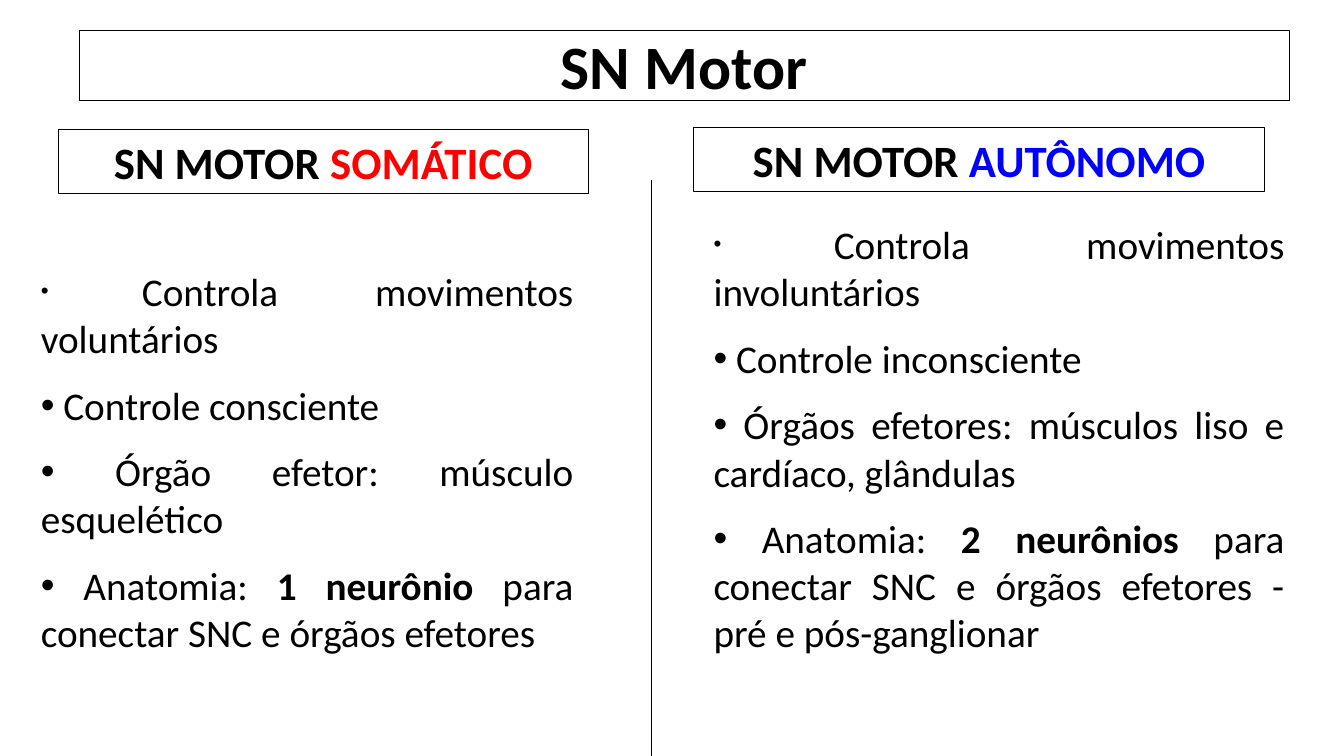
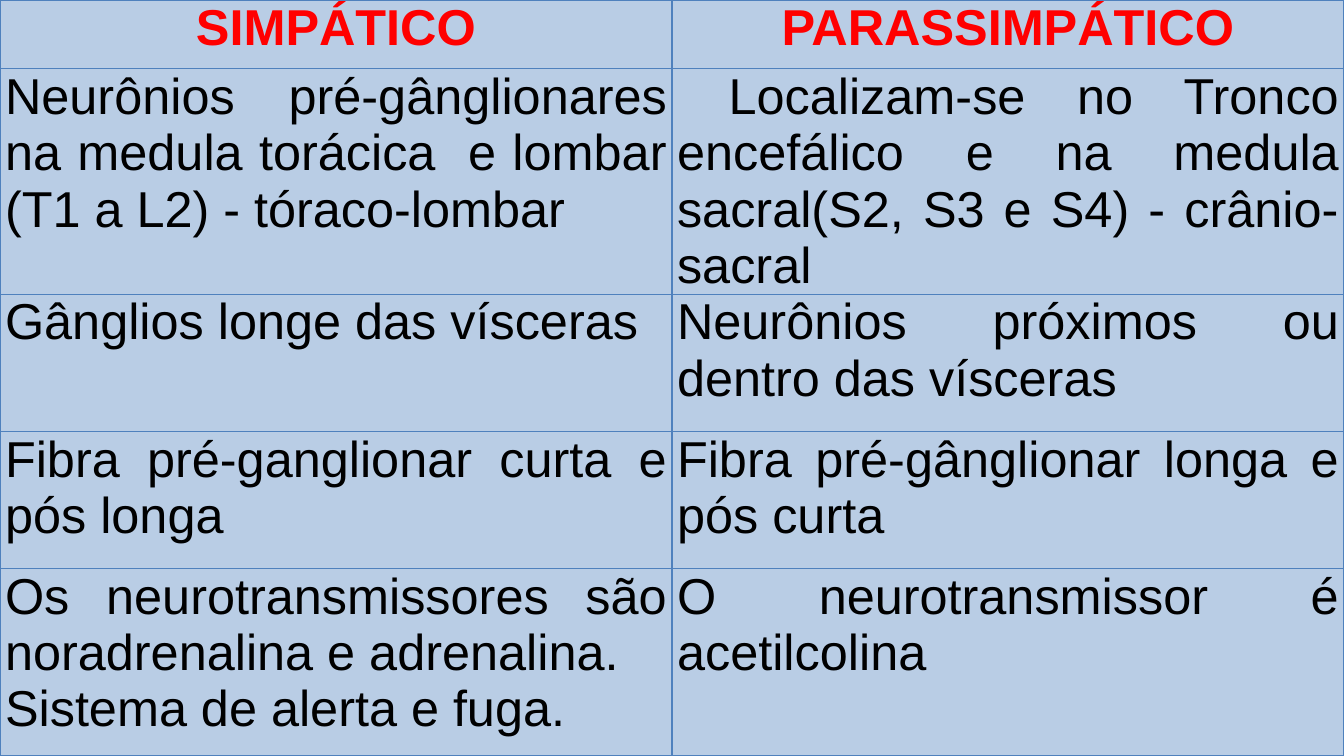
from lxml.etree import SubElement
from pptx import Presentation
from pptx.dml.color import RGBColor
from pptx.enum.shapes import MSO_CONNECTOR, MSO_SHAPE
from pptx.enum.text import MSO_ANCHOR, PP_ALIGN
from pptx.oxml.ns import qn
from pptx.util import Inches, Pt

COLORS = {"text": "000000", "red": "FF0000", "blue": "0000FF",
          "cell": "B9CDE5", "border": "4F81BD"}
WIDTH, HEIGHT = Inches(13.33), Inches(7.5)

deck = Presentation()
deck.slide_width, deck.slide_height = WIDTH, HEIGHT
blank = deck.slide_layouts[6]


def place(left, top, width, height):
    """Turn percentages of the slide's size into lengths."""
    return (int(WIDTH * left / 100), int(HEIGHT * top / 100),
            int(WIDTH * width / 100), int(HEIGHT * height / 100))


def write(para, spans, align, **base):
    """Fill a paragraph with (text, format) spans on top of a base format."""
    para.alignment = align
    for text, changes in spans:
        span = para.add_run()
        span.text = text
        look = {"size": Pt(28), "name": "Calibri", "bold": False,
                "color": "text", **base, **changes}
        span.font.color.rgb = RGBColor.from_string(COLORS[look.pop("color")])
        for key, value in look.items():
            setattr(span.font, key, value)


# Slide 1: somatic and autonomic motor systems side by side
page = deck.slides.add_slide(blank)

# Framed title and column headings
frames = [
    ((5.9, 4, 90, 9.2), 44, 0.25, [("SN Motor", {})]),
    ((4.35, 17.1, 39.4, 8.5), 32, 0.25,
     [("SN MOTOR ", {}), ("SOMÁTICO", {"color": "red"})]),
    ((51.6, 16.8, 42.5, 8.5), 32, 0.5,
     [("SN MOTOR ", {}), ("AUTÔNOMO", {"color": "blue"})]),
]
for area, size, line_width, spans in frames:
    box = page.shapes.add_shape(MSO_SHAPE.RECTANGLE, *place(*area))
    box.shadow.inherit = False
    box.fill.background()
    box.line.color.rgb = RGBColor.from_string(COLORS["text"])
    box.line.width = Pt(line_width)
    box.text_frame.word_wrap = True
    box.text_frame.vertical_anchor = MSO_ANCHOR.MIDDLE
    write(box.text_frame.paragraphs[0], spans, PP_ALIGN.CENTER,
          size=Pt(size), bold=True)

# Bulleted columns: the small first space also sets the first bullet's size
small, strong = {"size": Pt(16)}, {"bold": True}
columns = [
    ((2.3, 34.7, 41.1, 54.8), [
        [(" ", small), ("Controla movimentos voluntários", {})],
        [(" Controle consciente", {})],
        [(" Órgão efetor: músculo esquelético", {})],
        [(" Anatomia: ", {}), ("1 neurônio", strong),
         (" para conectar SNC e órgãos efetores", {})],
    ]),
    ((52.35, 28.5, 43.95, 61.1), [
        [(" ", small), ("Controla movimentos involuntários", {})],
        [(" Controle inconsciente", {})],
        [(" Órgãos efetores: músculos liso e cardíaco, glândulas", {})],
        [(" Anatomia: ", {}), ("2 neurônios", strong),
         (" para conectar SNC e órgãos efetores - pré e pós-ganglionar", {})],
    ]),
]
for area, items in columns:
    frame = page.shapes.add_textbox(*place(*area)).text_frame
    frame.word_wrap = True
    for index, spans in enumerate(items):
        para = frame.add_paragraph() if index else frame.paragraphs[0]
        para.space_before = Pt(14 if index else 0)
        write(para, spans, PP_ALIGN.JUSTIFY)
        properties = para._p.get_or_add_pPr()
        SubElement(properties, qn("a:buFont"), typeface="Arial")
        SubElement(properties, qn("a:buChar"), char="•")

# Divider between the columns
x, top, _, length = place(48.45, 23.75, 0, 76.25)
divider = page.shapes.add_connector(MSO_CONNECTOR.STRAIGHT, x, top, x, top + length)
divider.line.color.rgb = RGBColor.from_string(COLORS["text"])
divider.line.width = Pt(0.75)
SubElement(divider._element.spPr, qn("a:effectLst"))

# Slide 2: comparison table over the whole slide
page = deck.slides.add_slide(blank)
rows = [
    (0.68, "SIMPÁTICO", "PARASSIMPÁTICO"),
    (2.24, "Neurônios pré-gânglionares na medula torácica  e lombar (T1 a L2) - tóraco-lombar",
     " Localizam-se no Tronco encefálico e na medula sacral(S2, S3 e S4) - crânio-sacral"),
    (1.36, "Gânglios longe das vísceras", "Neurônios próximos ou dentro das vísceras"),
    (1.36, "Fibra pré-ganglionar curta e pós longa", "Fibra pré-gânglionar longa e pós curta"),
    (1.86, "Os neurotransmissores são noradrenalina e adrenalina.\nSistema de alerta e fuga.",
     "O neurotransmissor é acetilcolina"),
]
table = page.shapes.add_table(len(rows), 2, *place(0, 0, 100, 100)).table
table.first_row = table.horz_banding = False
margins = {"margin_left": Inches(0.05), "margin_right": Inches(0.05),
           "margin_top": 0, "margin_bottom": 0}

for row, (height, *texts) in enumerate(rows):
    table.rows[row].height = Inches(height)
    if row == 0:
        align, look = PP_ALIGN.CENTER, {"color": "red", "bold": True}
    else:
        align, look = PP_ALIGN.JUSTIFY, {}
    for column, text in enumerate(texts):
        cell = table.cell(row, column)
        for key, value in margins.items():
            setattr(cell, key, value)
        for index, line in enumerate(text.split("\n")):
            frame = cell.text_frame
            para = frame.add_paragraph() if index else frame.paragraphs[0]
            write(para, [(line, look)], align, size=Pt(36), name="Arial")
        # Borders come before the fill in the cell's properties
        properties = cell._tc.get_or_add_tcPr()
        for side in ("a:lnL", "a:lnR", "a:lnT", "a:lnB"):
            border = SubElement(properties, qn(side), w=str(Pt(1)))
            paint = SubElement(border, qn("a:solidFill"))
            SubElement(paint, qn("a:srgbClr"), val=COLORS["border"])
        paint = SubElement(properties, qn("a:solidFill"))
        SubElement(paint, qn("a:srgbClr"), val=COLORS["cell"])

deck.save("out.pptx")
